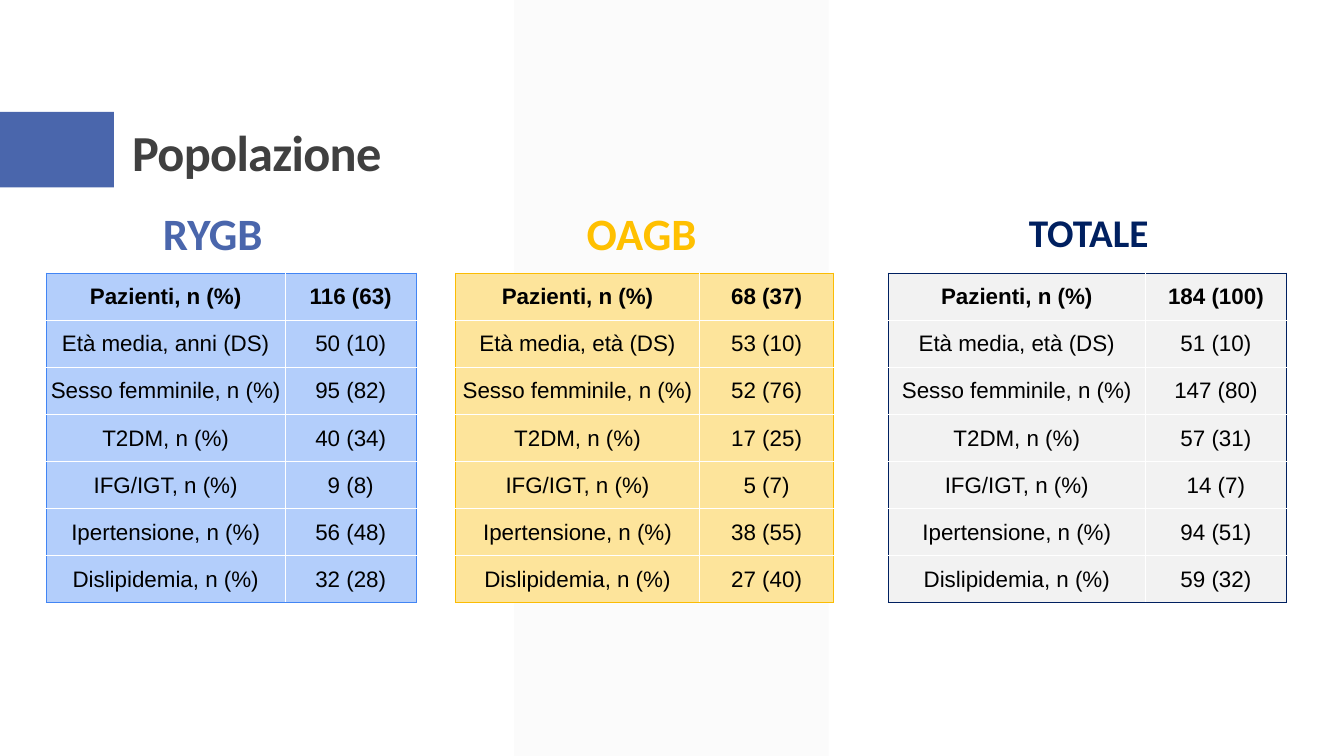
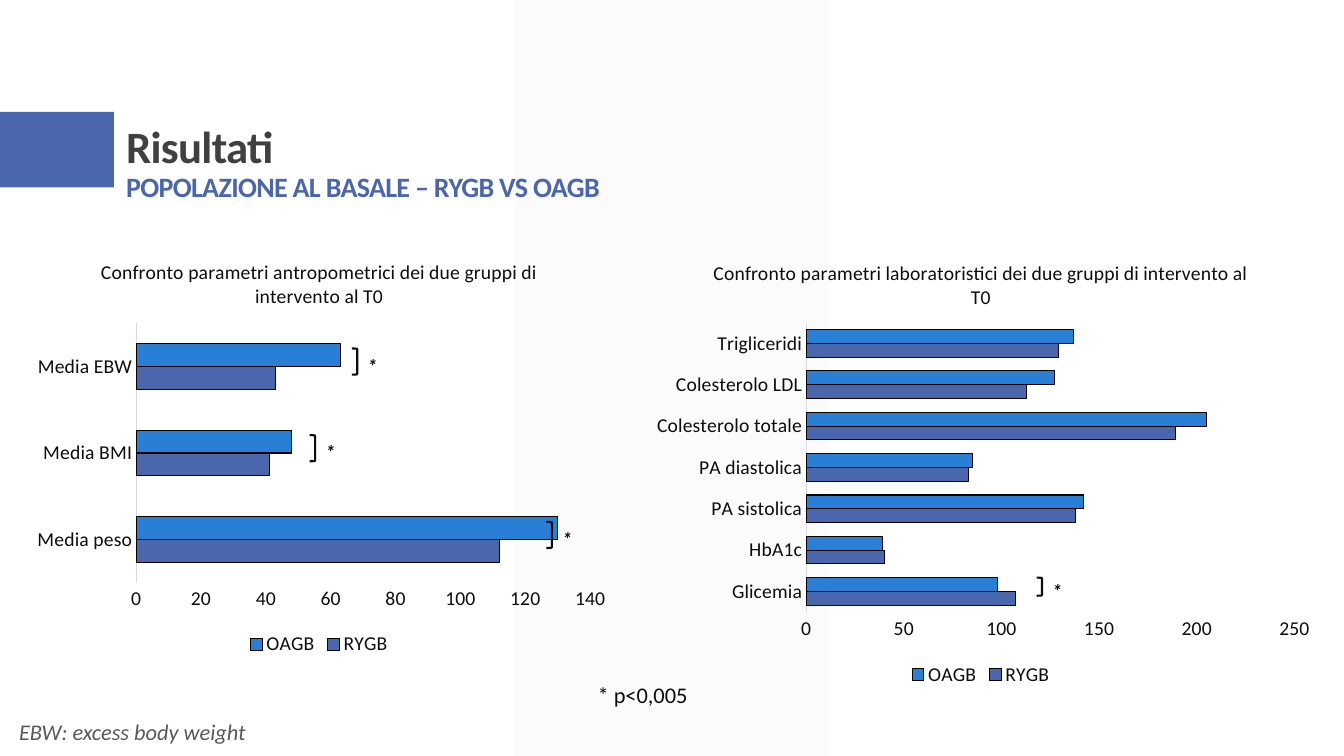
from dataclasses import dataclass

from lxml import etree
from pptx import Presentation
from pptx.chart.data import CategoryChartData
from pptx.dml.color import RGBColor
from pptx.enum.chart import XL_CHART_TYPE, XL_LEGEND_POSITION, XL_TICK_MARK
from pptx.enum.shapes import MSO_SHAPE
from pptx.enum.text import MSO_ANCHOR, MSO_AUTO_SIZE, PP_ALIGN
from pptx.oxml.ns import qn
from pptx.util import Inches, Pt

LEFT, CENTER = PP_ALIGN.LEFT, PP_ALIGN.CENTER
TOP, MIDDLE, BOTTOM = MSO_ANCHOR.TOP, MSO_ANCHOR.MIDDLE, MSO_ANCHOR.BOTTOM
PARALLELOGRAM, RECTANGLE = MSO_SHAPE.PARALLELOGRAM, MSO_SHAPE.RECTANGLE
RIGHT_BRACKET = MSO_SHAPE.RIGHT_BRACKET
NO_AUTO_SIZE = MSO_AUTO_SIZE.NONE
BAR_CLUSTERED = XL_CHART_TYPE.BAR_CLUSTERED
LEGEND_BOTTOM = XL_LEGEND_POSITION.BOTTOM
NO_TICK = XL_TICK_MARK.NONE
SLIDE_WIDTH, SLIDE_HEIGHT = Inches(13.33), Inches(7.5)


@dataclass(frozen=True)
class Theme:
    font: str = "Calibri"
    table_font: str = "Arial"
    blue: str = "4A66AC"
    bright_blue: str = "297FD5"
    gold: str = "FFC000"
    navy: str = "002060"
    title: str = "404040"
    ink: str = "0D0D0D"
    black: str = "000000"
    white: str = "FFFFFF"
    muted: str = "595959"
    band: str = "F2F2F2"
    axis: str = "D9D9D9"
    blue_fill: str = "B3CEFB"
    blue_border: str = "4285F4"
    gold_fill: str = "FDE49B"
    gold_border: str = "FBBC04"
    title_size: int = 36
    long_title_size: int = 32
    subtitle_size: int = 20
    heading_size: int = 32
    total_size: int = 28
    body_size: int = 16
    chart_size: int = 14


THEME = Theme()


@dataclass(frozen=True)
class Box:
    """A region in percent of the slide's width and height."""
    left: float
    top: float
    width: float
    height: float

    def region(self, left, top, width, height):
        """Return a region given in percent of this one."""
        return Box(self.left + self.width * left / 100,
                   self.top + self.height * top / 100,
                   self.width * width / 100, self.height * height / 100)

    def emu(self):
        return (int(SLIDE_WIDTH * self.left / 100), int(SLIDE_HEIGHT * self.top / 100),
                int(SLIDE_WIDTH * self.width / 100), int(SLIDE_HEIGHT * self.height / 100))


def rgb(color):
    return RGBColor.from_string(color)


def format_font(font, size, color, name=THEME.font, bold=False, italic=False):
    font.name, font.size = name, Pt(size)
    font.bold, font.italic = bold, italic
    font.color.rgb = rgb(color)


def write(frame, text, size=THEME.body_size, color=THEME.ink, align=LEFT, anchor=TOP,
          before=0, after=0, line_spacing=1.0, tracking=0, **font_format):
    """Write text in a frame; text that follows other text starts on a new line."""
    frame.word_wrap = True
    frame.vertical_anchor = anchor
    paragraph = frame.paragraphs[0]
    paragraph.alignment = align
    paragraph.space_before, paragraph.space_after = Pt(before), Pt(after)
    paragraph.line_spacing = line_spacing
    if paragraph.runs:
        paragraph.add_line_break()
    run = paragraph.add_run()
    run.text = text
    format_font(run.font, size, color, **font_format)
    if tracking:
        run.font._element.set("spc", str(int(tracking * 100)))


def add_text(slide, box, text, **text_format):
    write(slide.shapes.add_textbox(*box.emu()).text_frame, text, **text_format)


def add_shape(slide, kind, box, fill=None, line=None, line_width=1.5):
    shape = slide.shapes.add_shape(kind, *box.emu())
    shape.shadow.inherit = False
    if fill:
        shape.fill.solid()
        shape.fill.fore_color.rgb = rgb(fill)
    else:
        shape.fill.background()
    if line:
        shape.line.color.rgb = rgb(line)
        shape.line.width = Pt(line_width)
    else:
        shape.line.fill.background()
    return shape


def decorate_layout(layout, slide):
    """Draw the shared bands and move them to the back of the layout."""
    band = add_shape(slide, PARALLELOGRAM, Box(38.25, 0, 23.4, 100), THEME.band)
    band.adjustments[0] = 0
    color = band.element.spPr.find(qn("a:solidFill"))[0]
    etree.SubElement(color, qn("a:alpha")).set("val", "30000")
    tab = add_shape(slide, RECTANGLE, Box(0, 14.8, 8.48, 10), THEME.blue)
    for index, shape in enumerate((band, tab)):
        shape.element.nvSpPr.cNvPr.set("id", str(100 + index))
        layout.shapes.element.insert(2 + index, shape.element)


def set_title(slide, box, text, size, subtitle=None):
    title = slide.shapes.title
    title.left, title.top, title.width, title.height = box.emu()
    title.text_frame.auto_size = NO_AUTO_SIZE
    style = dict(anchor=BOTTOM, line_spacing=0.9, tracking=-0.5, bold=True)
    write(title.text_frame, text, size=size, color=THEME.title, **style)
    if subtitle:
        write(title.text_frame, subtitle, size=THEME.subtitle_size, color=THEME.blue, **style)


# Population tables

def set_borders(cell, **sides):
    """Set each side (L, R, T, B) to a colour and a width in points."""
    properties = cell._tc.get_or_add_tcPr()
    for side, (color, width) in sides.items():
        line = etree.SubElement(properties, qn("a:ln" + side), w=str(int(Pt(width))))
        fill = etree.SubElement(line, qn("a:solidFill"))
        etree.SubElement(fill, qn("a:srgbClr"), val=color)


def add_population_table(slide, box, rows, fill, border):
    table = slide.shapes.add_table(len(rows), 2, *box.emu()).table
    table.first_row = table.horz_banding = False
    width = box.emu()[2]
    table.columns[0].width = int(width * 0.645)
    table.columns[1].width = width - table.columns[0].width
    outer, inner = (border, 1), (THEME.white, 0.5)
    last = len(rows) - 1
    for row, texts in enumerate(rows):
        for column, text in enumerate(texts):
            cell = table.cell(row, column)
            cell.margin_left = cell.margin_right = cell.margin_top = Inches(0.01)
            cell.margin_bottom = 0
            cell.vertical_anchor = MIDDLE
            set_borders(cell, L=inner if column else outer, R=outer if column else inner,
                        T=inner if row else outer, B=outer if row == last else inner)
            cell.fill.solid()
            cell.fill.fore_color.rgb = rgb(fill)
            paragraph = cell.text_frame.paragraphs[0]
            paragraph.alignment = CENTER
            run = paragraph.add_run()
            run.text = text
            format_font(run.font, THEME.body_size, THEME.black,
                        name=THEME.table_font, bold=row == 0)


def add_group(slide, box, heading, heading_span, heading_format, age, values, fill, border):
    """A heading over the table of one patient group."""
    left, width = heading_span
    add_text(slide, box.region(left, 0, width, 19.85), heading, anchor=MIDDLE,
             before=12, after=2, bold=True, **heading_format)
    labels = ["Pazienti, n (%)", age, "Sesso femminile, n (%)", "T2DM, n (%)",
              "IFG/IGT, n (%)", "Ipertensione, n (%)", "Dislipidemia, n (%)"]
    add_population_table(slide, box.region(0, 19.85, 100, 80.15),
                         list(zip(labels, values)), fill, border)


def build_population(slide):
    set_title(slide, Box(9.08, 15.87, 21.6, 8.93), "Popolazione", THEME.title_size)
    size = THEME.heading_size
    top, height = 25.33, 54.4
    add_group(slide, Box(3.45, top, 27.53, height), "RYGB", (20.7, 48.5),
              dict(size=size, color=THEME.blue, align=CENTER), "Età media, anni (DS)",
              ["116 (63)", "50 (10)", "95 (82)", "40 (34)", "9 (8)", "56 (48)", "32 (28)"],
              THEME.blue_fill, THEME.blue_border)
    add_group(slide, Box(33.9, top, 28.13, height), "OAGB", (32, 37.7),
              dict(size=size, color=THEME.gold), "Età media, età (DS)",
              ["68 (37)", "53 (10)", "52 (76)", "17 (25)", "5 (7)", "38 (55)", "27 (40)"],
              THEME.gold_fill, THEME.gold_border)
    add_group(slide, Box(66.1, top, 29.63, height), "TOTALE", (32.8, 43),
              dict(size=THEME.total_size, color=THEME.navy), "Età media, età (DS)",
              ["184 (100)", "51 (10)", "147 (80)", "57 (31)", "14 (7)", "94 (51)", "59 (32)"],
              THEME.band, THEME.navy)


# Comparison charts

def set_plot_layout(chart, plot):
    """Fix the inner plot area, given in percent of the chart."""
    area = chart.element.find(".//" + qn("c:plotArea"))
    for old in area.findall(qn("c:layout")):
        area.remove(old)
    layout = etree.Element(qn("c:layout"))
    area.insert(0, layout)
    manual = etree.SubElement(layout, qn("c:manualLayout"))
    settings = [("layoutTarget", "inner"), ("xMode", "edge"), ("yMode", "edge")]
    settings += [(key, str(round(share / 100, 4))) for key, share in zip("xywh", plot)]
    for key, value in settings:
        etree.SubElement(manual, qn("c:" + key)).set("val", value)


def add_significance(slide, plot, row, rows, position, height):
    """A bracket and an asterisk beside one category, at a share of the value axis."""
    band = plot.height / rows
    left = plot.left + plot.width * position
    middle = plot.top + band * (row + 0.5) - 0.65
    add_shape(slide, RIGHT_BRACKET,
              Box(left, middle - height / 2, 0.4, height), line=THEME.ink)
    add_text(slide, Box(left + 0.42, middle - 1.73, 8.1, 4.53), "*",
             size=THEME.chart_size, bold=True, italic=True)


def add_comparison(slide, box, title, categories, series, plot, maximum, unit, gap,
                   marks, mark_height):
    """A bar chart; marks maps a category to the axis value where its bracket stands."""
    data = CategoryChartData()
    data.categories = categories
    for name, values, _ in series:
        data.add_series(name, values)
    chart = slide.shapes.add_chart(BAR_CLUSTERED, *box.emu(), data).chart
    format_font(chart.font, THEME.chart_size, THEME.ink)
    chart.has_title = True
    write(chart.chart_title.text_frame, title, size=THEME.chart_size, align=CENTER)
    chart.has_legend = True
    chart.legend.position = LEGEND_BOTTOM
    chart.legend.include_in_layout = False
    format_font(chart.legend.font, THEME.chart_size, THEME.ink)

    bars = chart.plots[0]
    bars.gap_width, bars.overlap, bars.vary_by_categories = gap, 0, False
    for bar_series, (_, _, color) in zip(bars.series, series):
        bar_series.format.fill.solid()
        bar_series.format.fill.fore_color.rgb = rgb(color)
        bar_series.format.line.color.rgb = rgb(THEME.black)
        bar_series.format.line.width = Pt(0.75)

    for axis in (chart.category_axis, chart.value_axis):
        axis.has_major_gridlines = False
        axis.major_tick_mark = axis.minor_tick_mark = NO_TICK
        format_font(axis.tick_labels.font, THEME.chart_size, THEME.ink)
    chart.category_axis.format.line.color.rgb = rgb(THEME.axis)
    chart.category_axis.format.line.width = Pt(0.75)
    value_axis = chart.value_axis
    value_axis.format.line.fill.background()
    value_axis.minimum_scale, value_axis.maximum_scale = 0, maximum
    value_axis.major_unit = unit
    set_plot_layout(chart, plot)

    count = len(categories)
    for category, value in marks.items():
        row = count - 1 - categories.index(category)
        add_significance(slide, box.region(*plot), row, count, value / maximum, mark_height)


def build_results(slide):
    set_title(slide, Box(8.63, 11.6, 89.25, 16), "Risultati", THEME.long_title_size,
              subtitle="POPOLAZIONE AL BASALE – RYGB VS OAGB")
    add_comparison(
        slide, Box(1.58, 31.87, 44.33, 55.47),
        "Confronto parametri antropometrici dei due gruppi di intervento al T0",
        ["Media peso", "Media BMI", "Media EBW"],
        [("RYGB", [112, 41, 43], THEME.blue), ("OAGB", [130, 48, 63], THEME.bright_blue)],
        plot=(19.3, 19.6, 76.2, 62), maximum=140, unit=20, gap=182,
        marks={"Media EBW": 66.5, "Media BMI": 53.5, "Media peso": 126.5}, mark_height=3.47)
    add_comparison(
        slide, Box(47.55, 31.87, 50.85, 59.47),
        "Confronto parametri laboratoristici dei due gruppi di intervento al T0",
        ["Glicemia", "HbA1c", "PA sistolica", "PA diastolica", "Colesterolo totale",
         "Colesterolo LDL", "Trigliceridi"],
        [("RYGB", [107, 40, 138, 83, 189, 113, 129], THEME.blue),
         ("OAGB", [98, 39, 142, 85, 205, 127, 137], THEME.bright_blue)],
        plot=(24.45, 18.2, 71.45, 64.4), maximum=250, unit=50, gap=100,
        marks={"Glicemia": 118}, mark_height=2.4)
    # Notes under the charts
    add_text(slide, Box(43.73, 89.47, 8.85, 8.53), "* p<0,005")
    add_text(slide, Box(0.68, 94.27, 42.15, 4.93), "EBW: excess body weight",
             color=THEME.muted, italic=True)


def main():
    presentation = Presentation()
    presentation.slide_width, presentation.slide_height = SLIDE_WIDTH, SLIDE_HEIGHT
    layout = presentation.slide_layouts[5]
    population, results = (presentation.slides.add_slide(layout) for _ in range(2))
    decorate_layout(layout, population)
    build_population(population)
    build_results(results)
    presentation.save("out.pptx")


if __name__ == "__main__":
    main()
